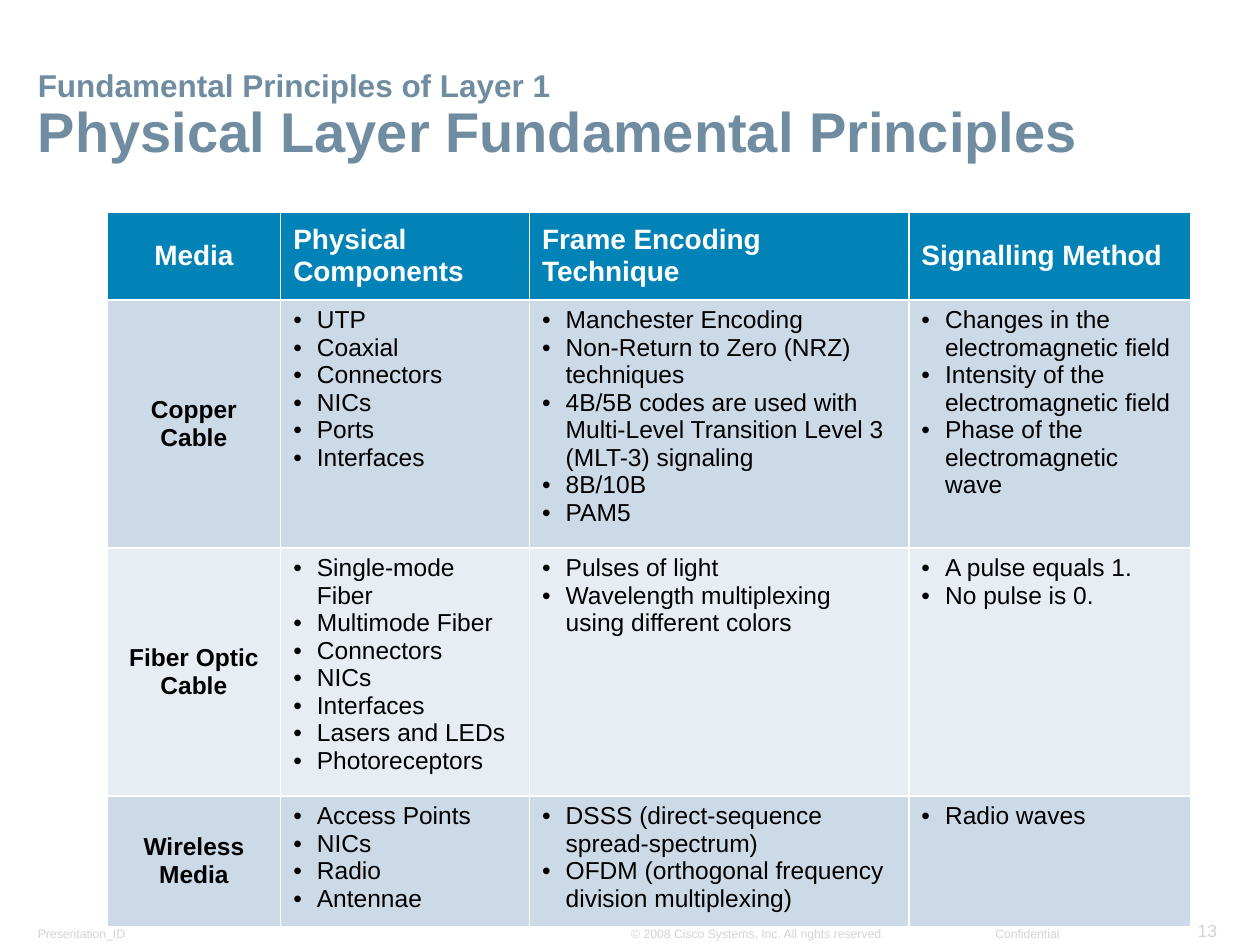
"""Build the slide on the fundamental principles of the physical layer."""
from lxml import etree
from pptx import Presentation
from pptx.dml.color import RGBColor
from pptx.enum import text
from pptx.oxml import ns
from pptx.util import Pt

TITLE = ("Fundamental Principles of Layer 1", "Physical Layer Fundamental Principles")
HEADERS = ["Media", "Physical Components", "Frame Encoding Technique", "Signalling Method"]
MEDIA = [
    ("Copper Cable",
     ["UTP", "Coaxial", "Connectors", "NICs", "Ports", "Interfaces"],
     ["Manchester Encoding", "Non-Return to Zero (NRZ) techniques",
      "4B/5B codes are used with Multi-Level Transition Level 3 (MLT-3) signaling",
      "8B/10B", "PAM5"],
     ["Changes in the electromagnetic field", "Intensity of the electromagnetic field",
      "Phase of the electromagnetic wave"]),
    ("Fiber Optic Cable",
     ["Single-mode Fiber", "Multimode Fiber", "Connectors", "NICs", "Interfaces",
      "Lasers and LEDs", "Photoreceptors"],
     ["Pulses of light", "Wavelength multiplexing using different colors"],
     ["A pulse equals 1.", "No pulse is 0."]),
    ("Wireless Media",
     ["Access Points", "NICs", "Radio", "Antennae"],
     ["DSSS (direct-sequence spread-spectrum)",
      "OFDM (orthogonal frequency division multiplexing)"],
     ["Radio waves"]),
]
LEFT, CENTER, RIGHT = text.PP_ALIGN.LEFT, text.PP_ALIGN.CENTER, text.PP_ALIGN.RIGHT
FOOTERS = [
    ("Presentation_ID", (15.1, 525.6, 75.6, 15.1), "footer", LEFT, True),
    ("13", (676.8, 522, 25.2, 18.7), "number", RIGHT, False),
    ("© 2008 Cisco Systems, Inc. All rights reserved.",
     (354.2, 525.6, 159.1, 15.1), "footer", LEFT, False),
    ("Acorn Confidential", (542.9, 525.6, 69.1, 15.1), "footer", RIGHT, False),
]
TITLE_BOX = (15.1, 31, 690.5, 66.2)
TABLE_AT = (61.2, 121)
COLUMNS = [99.2, 142.2, 216.8, 161]
ROWS = [50.4, 136, 120.2, 72]
INDENT = 13.5
THEME = {
    "font": "Arial",
    "fills": {"header": "0183B7", "bands": ["CCD9E6", "E7EDF3"]},
    "text": {
        "kicker": (18, "708CA1", True),
        "title": (32, "708CA1", True),
        "header": (16, "FFFFFF", True),
        "label": (14, "000000", True),
        "item": (14, "000000", False),
        "footer": (7, "D3D3D3", False),
        "number": (10, "D3D3D3", False),
    },
}


def apply(target, values):
    for name, value in values.items():
        setattr(target, name, value)


def add_run(p, words, style):
    size, color, bold = THEME["text"][style]
    r = p.add_run()
    r.text = words
    apply(r.font, {"name": THEME["font"], "size": Pt(size), "bold": bold})
    r.font.color.rgb = RGBColor.from_string(color)


def add_box(s, box, wrap):
    tf = s.shapes.add_textbox(*map(Pt, box)).text_frame
    apply(tf, {"word_wrap": wrap, "vertical_anchor": text.MSO_ANCHOR.BOTTOM,
               "margin_left": Pt(6.5), "margin_right": Pt(6.5),
               "margin_top": Pt(3.2), "margin_bottom": Pt(3.2)})
    return tf


def add_bullet(p):
    pPr = p._p.get_or_add_pPr()
    pPr.set("marL", str(Pt(INDENT)))
    pPr.set("indent", str(-Pt(INDENT)))
    etree.SubElement(pPr, ns.qn("a:buFont"), typeface=THEME["font"])
    etree.SubElement(pPr, ns.qn("a:buChar"), char="•")


def fill_cell(cell, content, style, color, align=LEFT):
    cell.fill.solid()
    cell.fill.fore_color.rgb = RGBColor.from_string(color)
    bulleted = isinstance(content, list)
    anchor = text.MSO_ANCHOR.TOP if bulleted else text.MSO_ANCHOR.MIDDLE
    cell.vertical_anchor = anchor
    tf = cell.text_frame
    for i, words in enumerate(content if bulleted else [content]):
        p = tf.add_paragraph() if i else tf.paragraphs[0]
        p.alignment = align
        if bulleted:
            add_bullet(p)
        add_run(p, words, style)


def add_media_table(s):
    size = (sum(COLUMNS), sum(ROWS))
    frame = s.shapes.add_table(len(ROWS), len(COLUMNS), *map(Pt, TABLE_AT + size))
    table = frame.table
    for column, width in zip(table.columns, COLUMNS):
        column.width = Pt(width)
    for row, height in zip(table.rows, ROWS):
        row.height = Pt(height)
    fills = THEME["fills"]
    for c, words in enumerate(HEADERS):
        fill_cell(table.cell(0, c), words, "header", fills["header"], LEFT if c else CENTER)
    for r, row in enumerate(MEDIA):
        band = fills["bands"][r % 2]
        for c, content in enumerate(row):
            style, align = ("item", LEFT) if c else ("label", CENTER)
            fill_cell(table.cell(r + 1, c), content, style, band, align)


def main():
    prs = Presentation()
    apply(prs, {"slide_width": Pt(720), "slide_height": Pt(540)})
    s = prs.slides.add_slide(prs.slide_layouts[6])
    for words, box, style, align, wrap in FOOTERS:
        tf = add_box(s, box, wrap)
        tf.auto_size = text.MSO_AUTO_SIZE.SHAPE_TO_FIT_TEXT
        p = tf.paragraphs[0]
        p.alignment = align
        add_run(p, words, style)
    p = add_box(s, TITLE_BOX, True).paragraphs[0]
    p.line_spacing = 0.9
    add_run(p, TITLE[0], "kicker")
    p.add_line_break()
    add_run(p, TITLE[1], "title")
    add_media_table(s)
    prs.save("out.pptx")


if __name__ == "__main__":
    main()
